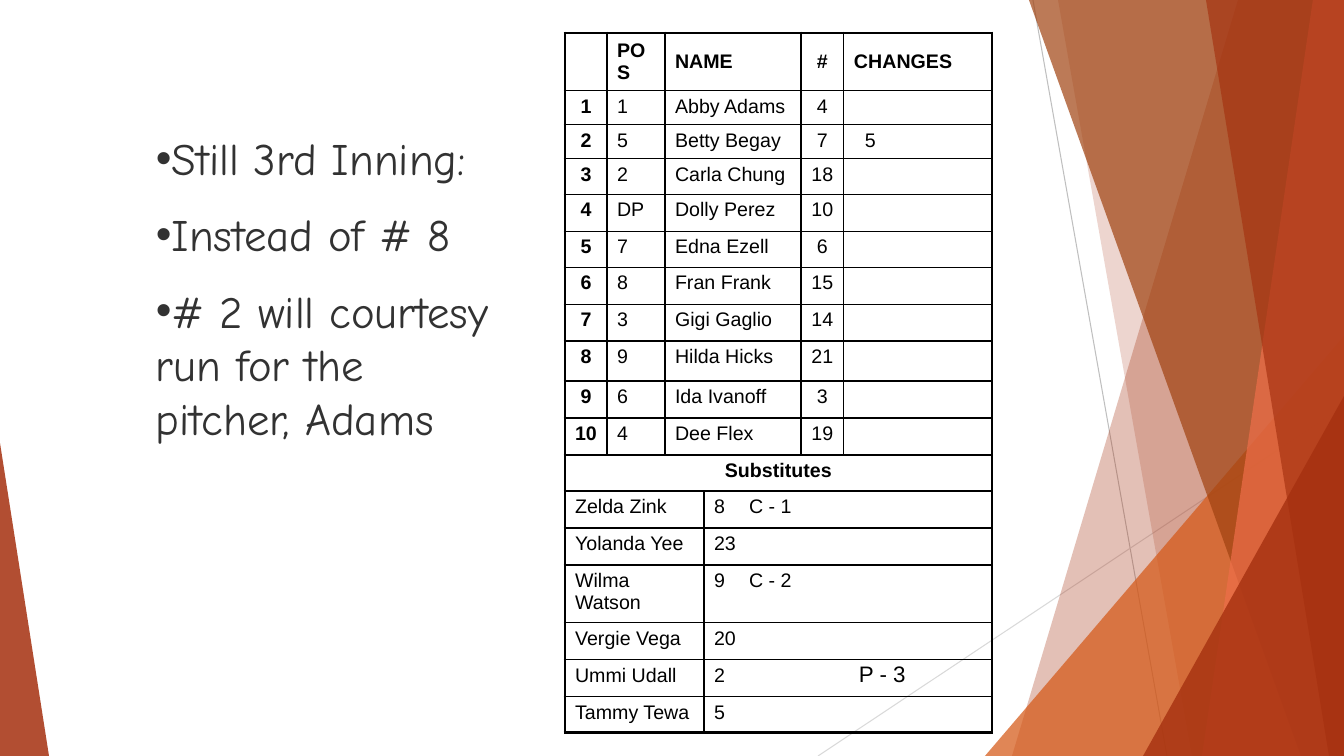
"""Build the softball lineup slide for a courtesy runner in the third inning."""
from dataclasses import dataclass

from lxml.etree import SubElement
from pptx import Presentation
from pptx.dml.color import RGBColor
from pptx.enum.shapes import MSO_CONNECTOR, MSO_SHAPE
from pptx.enum.text import MSO_ANCHOR as Anchor, PP_ALIGN as Align
from pptx.oxml.ns import qn
from pptx.util import Pt


@dataclass(frozen=True)
class Theme:
    """Colours, fonts and type sizes."""
    brick: str = "A5300F"
    orange: str = "D55816"
    brown: str = "A04210"
    coral: str = "EE6E4A"
    steep_line: str = "BFBFBF"
    shallow_line: str = "D9D9D9"
    body: str = "323232"
    ink: str = "000000"
    body_font: str = "Comic Neue"
    card_font: str = "Arial"
    body_size: int = 32
    note_size: int = 16
    card_size: int = 14
    hairline: float = 0.75
    inner_rule: float = 1
    outer_rule: float = 2.25


THEME = Theme()
SLIDE_W, SLIDE_H = 1344, 756

PLAYS = ["Still 3rd Inning:", "Instead of # 8", "# 2 will courtesy run for the pitcher, Adams"]
PLAYS_BOX = (146, 126, 355, 445)
PITCHER_RUN = "P - 3"
PITCHER_RUN_BOX = (849, 655, 76, 37)

HEADINGS = ("", "POS", "NAME", "#", "CHANGES")
BATTERS = [
    ("1", "1", "Abby Adams", "4", ""),
    ("2", "5", "Betty Begay", "7", "5"),
    ("3", "2", "Carla Chung", "18", ""),
    ("4", "DP", "Dolly Perez", "10", ""),
    ("5", "7", "Edna Ezell", "6", ""),
    ("6", "8", "Fran Frank", "15", ""),
    ("7", "3", "Gigi Gaglio", "14", ""),
    ("8", "9", "Hilda Hicks", "21", ""),
    ("9", "6", "Ida Ivanoff", "3", ""),
    ("10", "4", "Dee Flex", "19", ""),
]
SUBSTITUTES_TITLE = ("Substitutes",)
SUBSTITUTES = [
    ("Zelda Zink", "8\tC - 1"),
    ("Yolanda Yee", "23"),
    ("Wilma Watson", "9\tC - 2"),
    ("Vergie Vega", "20"),
    ("Ummi Udall", "2"),
    ("Tammy Tewa", "5"),
]
CARD_LEFT, CARD_TOP = 565, 33
COLUMN_WIDTHS = (42, 58, 39, 97, 43, 148)
ROW_HEIGHTS = (57, 34, 34, 36, 37, 36, 37, 37, 40, 37, 37, 36, 37, 37, 57, 37, 37, 36)
SPANS = {5: (1, 1, 2, 1, 1), 1: (6,), 2: (3, 3)}
CHANGE_INDENT, CHANGE_TAB = 11, 35

LINES = [
    ((1033, 0), (1167, SLIDE_H), THEME.steep_line),
    ((SLIDE_W, 406), (818, SLIDE_H), THEME.shallow_line),
]
PANES = [
    ("band", (1238, 1012), THEME.brick, 30),
    ("band", (1058, 1192), THEME.brick, 20),
    ("triangle", (985, 336, 359, 420, 1), THEME.orange, 72),
    ("band", (1029, 1301), THEME.brown, 70),
    ("band", (1313, 1202), THEME.coral, 70),
    ("band", (1206, 1329), THEME.brick, 65),
    ("triangle", (1143, 396, 201, 360, 1), THEME.brick, 80),
    ("triangle", (0, 443, 49, 313, 0), THEME.brick, 85),
]


def px(length):
    return round(length * 914400 / 100.8)


def rgb(colour):
    return RGBColor.from_string(colour)


def add_line(slide, start, end, colour):
    line = slide.shapes.add_connector(MSO_CONNECTOR.STRAIGHT, *map(px, start + end))
    line.line.color.rgb = rgb(colour)
    line.line.width = Pt(THEME.hairline)
    SubElement(line._element.spPr, qn("a:effectLst"))


def add_pane(slide, kind, geometry, colour, opacity):
    if kind == "band":
        top_x, bottom_x = geometry
        outline = slide.shapes.build_freeform(px(top_x), 0, scale=1.0)
        corners = [(SLIDE_W, 0), (SLIDE_W, SLIDE_H), (bottom_x, SLIDE_H)]
        outline.add_line_segments([(px(x), px(y)) for x, y in corners], close=True)
        pane = outline.convert_to_shape()
    else:
        *box, apex = geometry
        pane = slide.shapes.add_shape(MSO_SHAPE.ISOSCELES_TRIANGLE, *map(px, box))
        pane.adjustments[0] = apex
    pane.shadow.inherit = False
    pane.fill.solid()
    pane.fill.fore_color.rgb = rgb(colour)
    pane.line.fill.background()
    tint = pane._element.spPr.find(".//" + qn("a:srgbClr"))
    SubElement(tint, qn("a:alpha"), val=str(opacity * 1000))


def write(paragraph, text, font, size, colour, space_percent, bold=False):
    properties = paragraph._p.get_or_add_pPr()
    spacing = SubElement(properties, qn("a:spcBef"))
    SubElement(spacing, qn("a:spcPct"), val=str(space_percent * 1000))
    if not text:
        SubElement(paragraph._p, qn("a:endParaRPr"), sz=str(size * 100))
        return properties
    run = paragraph.add_run()
    run.text = text
    run.font.name = font
    run.font.size = Pt(size)
    run.font.bold = bold
    run.font.color.rgb = rgb(colour)
    return properties


def add_text_frame(slide, box):
    frame = slide.shapes.add_textbox(*map(px, box)).text_frame
    frame.word_wrap = True
    return frame


def add_plays(slide):
    frame = add_text_frame(slide, PLAYS_BOX)
    for index, play in enumerate(PLAYS):
        paragraph = frame.add_paragraph() if index else frame.paragraphs[0]
        properties = write(paragraph, play, THEME.body_font, THEME.body_size, THEME.body, 50)
        SubElement(properties, qn("a:buFont"), typeface=THEME.card_font)
        SubElement(properties, qn("a:buChar"), char="•")


def rule_cell(cell, first_row, last_row, first_column, last_column):
    edges = {"L": first_column, "R": last_column, "T": first_row, "B": last_row}
    properties = cell._tc.get_or_add_tcPr()
    for side, is_outer in edges.items():
        width = THEME.outer_rule if is_outer else THEME.inner_rule
        border = SubElement(properties, qn(f"a:ln{side}"), w=str(Pt(width)))
        SubElement(SubElement(border, qn("a:solidFill")), qn("a:srgbClr"), val=THEME.ink)
    cell.fill.background()


def add_card(slide):
    entries = [HEADINGS, *BATTERS, SUBSTITUTES_TITLE, *SUBSTITUTES]
    size = (sum(COLUMN_WIDTHS), sum(ROW_HEIGHTS))
    card = slide.shapes.add_table(
        len(entries), len(COLUMN_WIDTHS), *map(px, (CARD_LEFT, CARD_TOP, *size))).table
    card.first_row = card.horz_banding = False
    for column, width in zip(card.columns, COLUMN_WIDTHS):
        column.width = px(width)
    for row, height in zip(card.rows, ROW_HEIGHTS):
        row.height = px(height)

    last = len(entries) - 1
    for row, entry in enumerate(entries):
        is_batter = len(entry) == len(HEADINGS)
        is_title = entry == SUBSTITUTES_TITLE
        column = 0
        for part, (text, span) in enumerate(zip(entry, SPANS[len(entry)])):
            cell = card.cell(row, column)
            end = column + span - 1
            if span > 1:
                cell.merge(card.cell(row, end))
            rule_cell(cell, row == 0, row == last, column == 0, end == len(COLUMN_WIDTHS) - 1)
            cell.vertical_anchor = Anchor.TOP if row else Anchor.MIDDLE
            paragraph = cell.text_frame.paragraphs[0]
            if is_title or is_batter and part in (0, 3):
                paragraph.alignment = Align.CENTER
            bold = row == 0 or is_title or is_batter and part == 0
            properties = write(
                paragraph, text, THEME.card_font, THEME.card_size, THEME.ink, 20, bold)
            if "\t" in text:
                stops = SubElement(properties, qn("a:tabLst"))
                SubElement(stops, qn("a:tab"), pos=str(px(CHANGE_TAB)), algn="l")
            if row and part == 4 and text:
                properties.set("marL", str(px(CHANGE_INDENT)))
            column += span


def main():
    deck = Presentation()
    deck.slide_width, deck.slide_height = px(SLIDE_W), px(SLIDE_H)
    slide = deck.slides.add_slide(deck.slide_layouts[6])
    for line in LINES:
        add_line(slide, *line)
    for pane in PANES:
        add_pane(slide, *pane)
    add_plays(slide)
    note = add_text_frame(slide, PITCHER_RUN_BOX).paragraphs[0]
    write(note, PITCHER_RUN, THEME.card_font, THEME.note_size, THEME.ink, 50)
    add_card(slide)
    deck.save("out.pptx")


if __name__ == "__main__":
    main()
